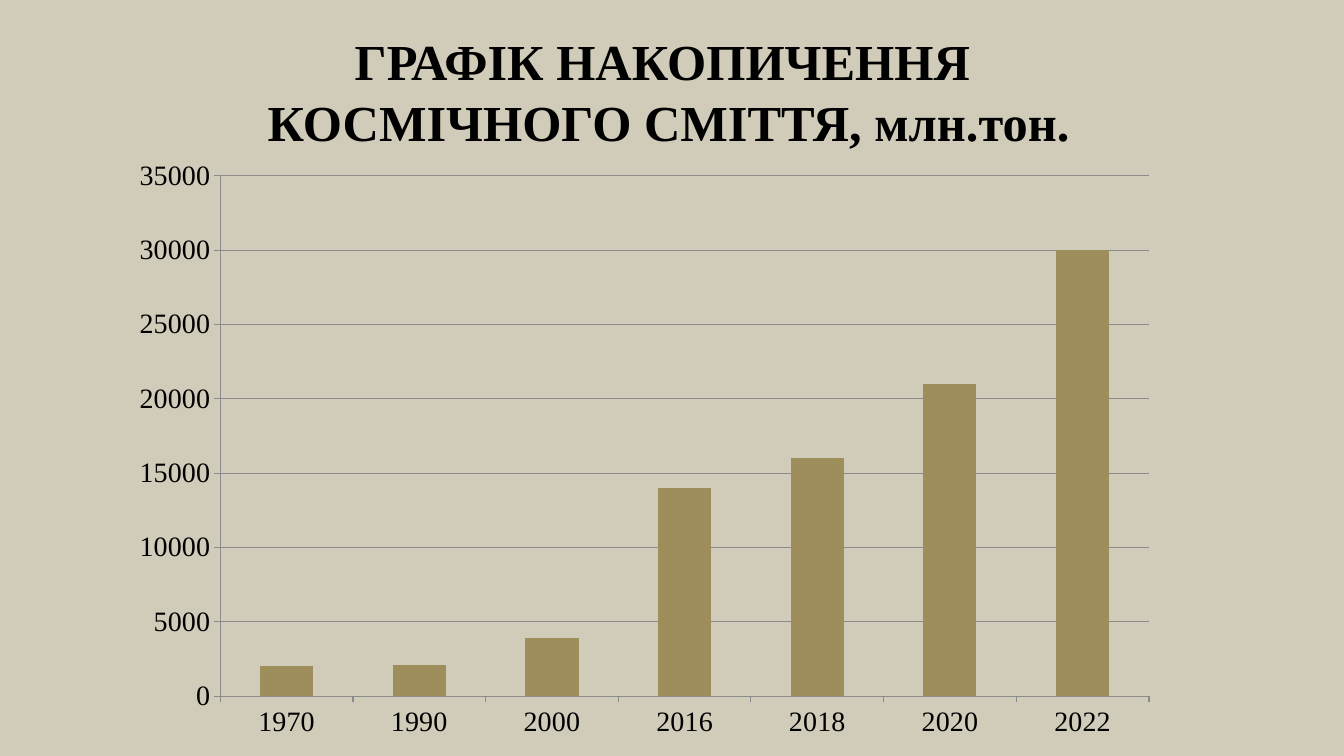
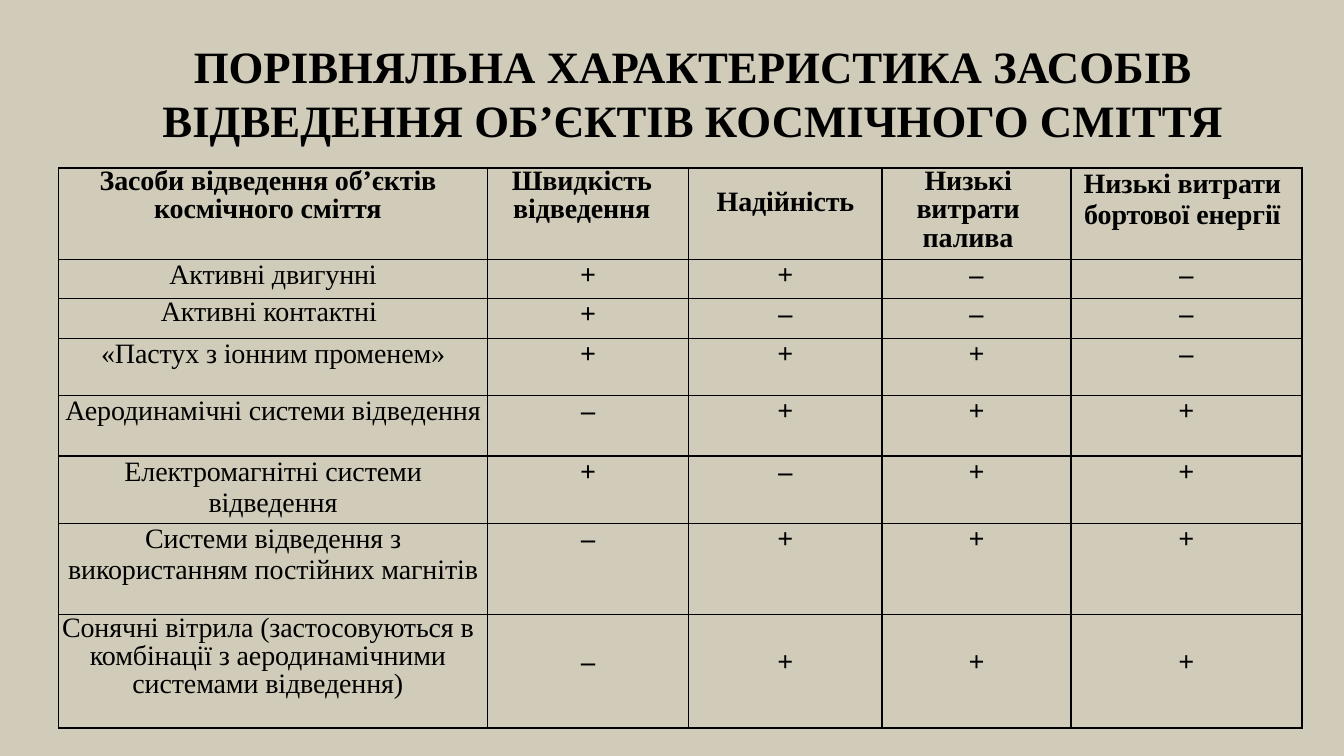
from lxml.etree import SubElement as Sub
from pptx import Presentation
from pptx.chart.data import CategoryChartData as Data
from pptx.dml.color import RGBColor as RGB
from pptx.enum.chart import XL_CHART_TYPE as Kind, XL_TICK_MARK as Tick
from pptx.enum.text import MSO_AUTO_SIZE as Size, PP_ALIGN as Align
from pptx.oxml import parse_xml
from pptx.oxml.ns import nsdecls, qn
from pptx.util import Pt

PX = 9525
SAND, GOLD = RGB(0xD0, 0xCC, 0xB9), RGB(0x9E, 0x8E, 0x5C)
BLACK, GRAY = RGB(0, 0, 0), RGB(0x8B, 0x8B, 0x8B)
SERIF = "Times New Roman"

GROWTH = {"1970": 2000, "1990": 2100, "2000": 3900, "2016": 14000,
          "2018": 16000, "2020": 21000, "2022": 30000}
PLOT = {"x": 0.098, "y": 0.029, "w": 0.819, "h": 0.871}
CHART_HEAD = ["ГРАФІК НАКОПИЧЕННЯ ", "КОСМІЧНОГО СМІТТЯ, млн.тон."]
TABLE_HEAD = ["ПОРІВНЯЛЬНА ХАРАКТЕРИСТИКА ЗАСОБІВ ВІДВЕДЕННЯ ОБ’ЄКТІВ КОСМІЧНОГО СМІТТЯ"]

# text, column width, line spacing, top inset, right inset
COLS = [
    ("Засоби відведення об’єктів космічного сміття", 408, 0.91, 0, 10),
    ("Швидкість відведення", 192, 0.91, 0, 12),
    ("Надійність", 184, 1.0, 18, 0),
    ("Низькі витрати палива", 180, 0.91, 0, 16),
    ("Низькі витрати бортової енергії", 220, 1.0, 0, 8),
]
# text, signs, row height, line spacing, top inset of signs, right inset
ROWS = [
    ("Активні двигунні", "++––", 37, 1.0, 0, 0),
    ("Активні контактні", "+–––", 38, 0.91, 0, 8),
    ("«Пастух з іонним променем»", "+++–", 54, 1.0, 0, 0),
    ("Аеродинамічні системи відведення", "–+++", 58, 1.0, 0, 0),
    ("Електромагнітні системи відведення", "+–++", 59, 1.0, 0, 0),
    ("Системи відведення з використанням постійних магнітів", "–+++", 87, 1.0, 0, 0),
    ("Сонячні вітрила (застосовуються в комбінації з аеродинамічними системами відведення)",
     "–+++", 108, 0.91, 30, 10),
]
HEAD_H = 81


def box(*px):
    return [n * PX for n in px]


def style(font, size, bold=False):
    font.name, font.size, font.bold = SERIF, Pt(size), bold
    font.color.rgb = BLACK


def write(par, text, size, bold):
    par.alignment = Align.CENTER
    run = par.add_run()
    run.text = text
    style(run.font, size, bold)
    return run


def add_page(deck, lines, size, area):
    page = deck.slides.add_slide(deck.slide_layouts[6])
    page.background.fill.solid()
    page.background.fill.fore_color.rgb = SAND
    frame = page.shapes.add_textbox(*box(*area)).text_frame
    frame.word_wrap = True
    frame.auto_size = Size.SHAPE_TO_FIT_TEXT
    for i, line in enumerate(lines):
        par = frame.add_paragraph() if i else frame.paragraphs[0]
        write(par, line, size, True)
    return page


def line_of(part):
    part.format.line.color.rgb = GRAY
    part.format.line.width = Pt(0.75)


def add_bars(page):
    data = Data()
    data.categories = list(GROWTH)
    data.add_series("Series 1", list(GROWTH.values()))
    chart = page.shapes.add_chart(Kind.COLUMN_CLUSTERED, *box(104, 151, 1080, 569), data).chart
    chart.has_title = chart.has_legend = False
    style(chart.font, 18)
    for axis in (chart.category_axis, chart.value_axis):
        style(axis.tick_labels.font, 20)
        axis.major_tick_mark = Tick.OUTSIDE
        line_of(axis)
    axis = chart.value_axis
    axis.minimum_scale, axis.maximum_scale, axis.major_unit = 0, 35000, 5000
    line_of(axis.major_gridlines)
    plot = chart.plots[0]
    plot.gap_width, plot.vary_by_categories = 150, False
    fill = plot.series[0].format.fill
    fill.solid()
    fill.fore_color.rgb = GOLD
    modes = "".join(f'<c:{k}Mode val="edge"/>' for k in "xy")
    sizes = "".join(f'<c:{k} val="{v}"/>' for k, v in PLOT.items())
    area = plot._element.getparent()
    for old in area.findall(qn("c:layout")):
        area.remove(old)
    area.insert(0, parse_xml(
        f'<c:layout {nsdecls("c")}><c:manualLayout><c:layoutTarget val="inner"/>'
        f'{modes}{sizes}</c:manualLayout></c:layout>'))


def fill_cell(cell, text, bold, gap=1.0, top=0, right=0):
    cell.margin_left = cell.margin_bottom = 0
    cell.margin_top, cell.margin_right = box(top, right)
    par = cell.text_frame.paragraphs[0]
    par.line_spacing = gap
    run = write(par, text, 20, bold)
    run._r.get_or_add_rPr().set("spc", "-10")
    props = cell._tc.get_or_add_tcPr()
    for side in "LRTB":
        edge = Sub(props, qn(f"a:ln{side}"), w=str(Pt(1)))
        Sub(Sub(edge, qn("a:solidFill")), qn("a:srgbClr"), val=str(BLACK))
    cell.fill.background()


def add_grid(page):
    highs = [HEAD_H] + [row[2] for row in ROWS]
    wides = [col[1] for col in COLS]
    area = box(56, 160, sum(wides), sum(highs))
    grid = page.shapes.add_table(len(highs), len(wides), *area).table
    grid.first_row = grid.horz_banding = False
    for col, wide in zip(grid.columns, wides):
        col.width = wide * PX
    for row, high in zip(grid.rows, highs):
        row.height = high * PX
    for c, (text, _, gap, top, right) in enumerate(COLS):
        fill_cell(grid.cell(0, c), text, True, gap, top, right)
    for r, (text, signs, _, gap, top, right) in enumerate(ROWS, 1):
        fill_cell(grid.cell(r, 0), text, False, gap, 0, right)
        for c, sign in enumerate(signs, 1):
            fill_cell(grid.cell(r, c), sign, True, top=top)


def main():
    deck = Presentation()
    deck.slide_width, deck.slide_height = box(1280, 720)
    add_bars(add_page(deck, CHART_HEAD, 36, (153, 24, 968, 126)))
    add_grid(add_page(deck, TABLE_HEAD, 32, (80, 32, 1160, 113)))
    deck.save("out.pptx")


if __name__ == "__main__":
    main()
